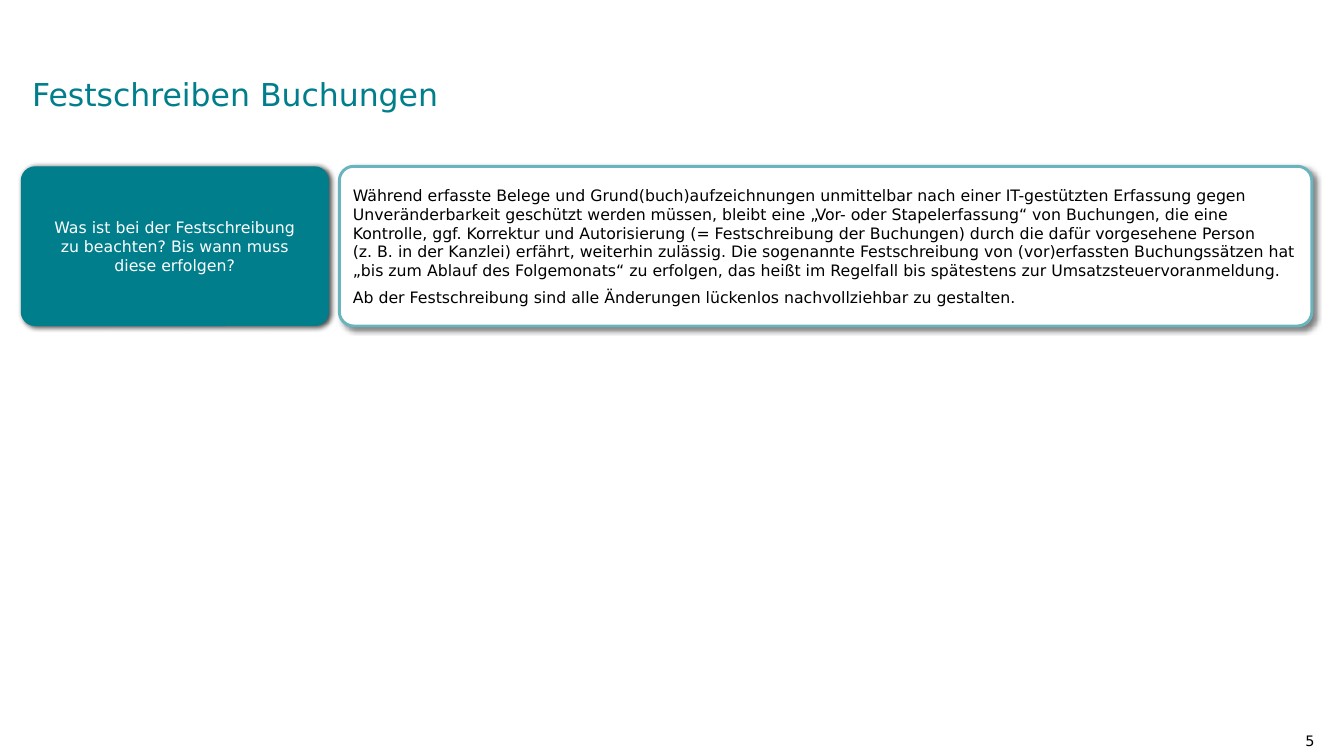
"""Build the slide on finalising bookings: a question card beside its answer card."""
from lxml import etree
from pptx import Presentation
from pptx import util as u
from pptx.dml.color import RGBColor
from pptx.enum import shapes, text
from pptx.oxml import ns

FONT = "DejaVu Sans"
TEAL = RGBColor(0x00, 0x7E, 0x8C)
LIGHT_TEAL = RGBColor(0x69, 0xB4, 0xBD)
WHITE = RGBColor(0xFF, 0xFF, 0xFF)
BLACK = RGBColor(0x00, 0x00, 0x00)

QUESTION = [
    "Was ist bei der Festschreibung",
    "zu beachten? Bis wann muss",
    "diese erfolgen?",
]
ANSWER = [
    "Während erfasste Belege und Grund(buch)aufzeichnungen unmittelbar nach einer "
    "IT-gestützten Erfassung gegen Unveränderbarkeit geschützt werden müssen, bleibt eine "
    "„Vor- oder Stapelerfassung“ von Buchungen, die eine Kontrolle, ggf. Korrektur und "
    "Autorisierung (= Festschreibung der Buchungen) durch die dafür vorgesehene Person\v"
    "(z. B. in der Kanzlei) erfährt, weiterhin zulässig. Die sogenannte Festschreibung von "
    "(vor)erfassten Buchungssätzen hat „bis zum Ablauf des Folgemonats“ zu erfolgen, das "
    "heißt im Regelfall bis spätestens zur Umsatzsteuervoranmeldung.",
    "Ab der Festschreibung sind alle Änderungen lückenlos nachvollziehbar zu gestalten.",
]


def write(frame, lines, size, color, align, gap=0):
    frame.word_wrap = True
    for index, line in enumerate(lines):
        paragraph = frame.paragraphs[0] if index == 0 else frame.add_paragraph()
        paragraph.text = line
        paragraph.alignment = align
        paragraph.space_before = u.Pt(gap if index else 0)
        paragraph.font.name = FONT
        paragraph.font.size = u.Pt(size)
        paragraph.font.color.rgb = color


def cast_shadow(card, opacity, distance, angle):
    card.shadow.inherit = False
    effects = card._element.spPr.find(ns.qn("a:effectLst"))
    shadow = etree.SubElement(
        effects, ns.qn("a:outerShdw"), blurRad=str(u.Pt(4)), dist=str(u.Pt(distance)),
        dir=str(angle * 60000), algn="tl", rotWithShape="0")
    tint = etree.SubElement(shadow, ns.qn("a:srgbClr"), val=str(BLACK))
    etree.SubElement(tint, ns.qn("a:alpha"), val=str(opacity * 1000))


deck = Presentation()
deck.slide_width, deck.slide_height = u.Inches(14.22), u.Inches(8)
slide = deck.slides.add_slide(deck.slide_layouts[5])

title = slide.shapes.title
title.left, title.top = u.Inches(0.34), u.Inches(0.49)
title.width, title.height = u.Inches(9.58), u.Inches(1.01)
heading = title.text_frame
heading.auto_size = text.MSO_AUTO_SIZE.NONE
heading.vertical_anchor = text.MSO_ANCHOR.MIDDLE
heading.margin_left = heading.margin_top = heading.margin_bottom = 0
heading.margin_right = u.Inches(0.13)
write(heading, ["Festschreiben Buchungen"], 24, TEAL, text.PP_ALIGN.LEFT)

CARD_TOP, CARD_HEIGHT = u.Inches(1.76), u.Inches(1.69)
cards = [
    (3.59, 10.29, WHITE, LIGHT_TEAL, ANSWER, BLACK, text.PP_ALIGN.LEFT, (50, 3, 40)),
    (0.22, 3.26, TEAL, None, QUESTION, WHITE, text.PP_ALIGN.CENTER, (70, 2, 20)),
]
for left, width, fill, border, lines, ink, align, shade in cards:
    card = slide.shapes.add_shape(
        shapes.MSO_SHAPE.ROUNDED_RECTANGLE,
        u.Inches(left), CARD_TOP, u.Inches(width), CARD_HEIGHT)
    card.adjustments[0] = 0.09
    card.fill.solid()
    card.fill.fore_color.rgb = fill
    if border:
        card.line.color.rgb = border
        card.line.width = u.Pt(2.25)
    else:
        card.line.fill.background()
    cast_shadow(card, *shade)
    card.text_frame.vertical_anchor = text.MSO_ANCHOR.MIDDLE
    write(card.text_frame, lines, 12, ink, align, 6 if lines is ANSWER else 0)

page_number = slide.shapes.add_textbox(
    u.Inches(12.9), u.Inches(7.69), u.Inches(1.14), u.Inches(0.21)).text_frame
page_number.margin_left = page_number.margin_right = u.Inches(0.13)
page_number.margin_top = page_number.margin_bottom = u.Inches(0.06)
write(page_number, ["5"], 11, BLACK, text.PP_ALIGN.RIGHT)

deck.save("out.pptx")
